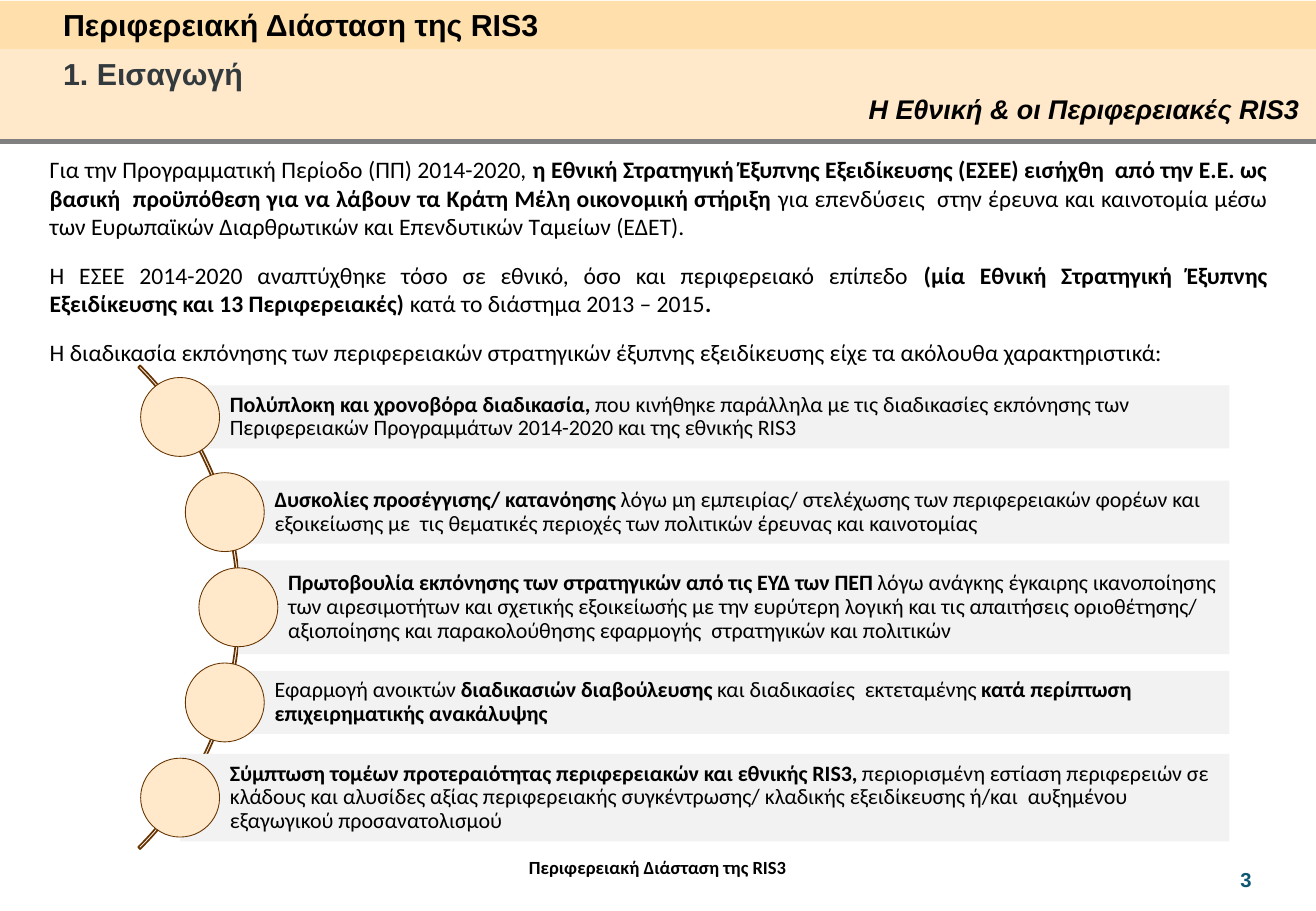
from math import sqrt

from pptx import Presentation
from pptx.dml.color import RGBColor
from pptx.enum.shapes import MSO_CONNECTOR, MSO_SHAPE
from pptx.enum.text import MSO_ANCHOR, MSO_AUTO_SIZE, PP_ALIGN
from pptx.oxml import parse_xml
from pptx.util import Cm, Pt

RECT, ELLIPSE, BLOCK_ARC = MSO_SHAPE.RECTANGLE, MSO_SHAPE.OVAL, MSO_SHAPE.BLOCK_ARC
STRAIGHT = MSO_CONNECTOR.STRAIGHT
TOP, MIDDLE = MSO_ANCHOR.TOP, MSO_ANCHOR.MIDDLE
LEFT, CENTER, JUSTIFY = PP_ALIGN.LEFT, PP_ALIGN.CENTER, PP_ALIGN.JUSTIFY
GROW = MSO_AUTO_SIZE.SHAPE_TO_FIT_TEXT
SLIDE_W, SLIDE_H = 27.51, 19.05
BLACK, CREAM, BROWN = "000000", "FFE9CA", "663300"
INSETS = (0.25, 0.13, 0.25, 0.13)
NS = "http://schemas.openxmlformats.org/drawingml/2006/main"

TOPIC = "Περιφερειακή Διάσταση της RIS3"

# Each paragraph is a list of (text, bold) pieces
INTRO = [
    [("Για την Προγραμματική Περίοδο (ΠΠ) 2014-2020, ", False),
     ("η Εθνική Στρατηγική Έξυπνης Εξειδίκευσης (ΕΣΕΕ) εισήχθη  από την Ε.Ε. ως βασική  "
      "προϋπόθεση για να λάβουν τα Κράτη Μέλη οικονομική στήριξη ", True),
     ("για επενδύσεις  στην έρευνα και καινοτομία μέσω των Ευρωπαϊκών Διαρθρωτικών και "
      "Επενδυτικών Ταμείων (ΕΔΕΤ).", False)],
    [("Η ΕΣΕΕ 2014-2020 αναπτύχθηκε τόσο σε εθνικό, όσο και περιφερειακό επίπεδο ", False),
     ("(μία Εθνική Στρατηγική Έξυπνης Εξειδίκευσης και 13 Περιφερειακές) ", True),
     ("κατά το διάστημα 2013 – 2015", False), (".", True)],
    [("Η διαδικασία εκπόνησης των περιφερειακών στρατηγικών έξυπνης εξειδίκευσης είχε τα "
      "ακόλουθα χαρακτηριστικά:", False)],
]

# Bar height and text of each characteristic
CHARACTERISTICS = [
    (1.32, [("Πολύπλοκη και χρονοβόρα διαδικασία, ", True),
            ("που κινήθηκε παράλληλα με τις διαδικασίες εκπόνησης των Περιφερειακών "
             "Προγραμμάτων 2014-2020 και της εθνικής RIS3", False)]),
    (1.32, [("Δυσκολίες προσέγγισης/ κατανόησης ", True),
            ("λόγω μη εμπειρίας/ στελέχωσης των περιφερειακών φορέων και εξοικείωσης με  "
             "τις θεματικές περιοχές των πολιτικών έρευνας και καινοτομίας", False)]),
    (1.96, [("Πρωτοβουλία εκπόνησης των στρατηγικών από τις ΕΥΔ των ΠΕΠ ", True),
            ("λόγω ανάγκης έγκαιρης ικανοποίησης των αιρεσιμοτήτων και σχετικής "
             "εξοικείωσής με την ευρύτερη λογική και τις απαιτήσεις οριοθέτησης/ "
             "αξιοποίησης και παρακολούθησης εφαρμογής  στρατηγικών και πολιτικών", False)]),
    (1.32, [("Εφαρμογή ανοικτών ", False), ("διαδικασιών διαβούλευσης ", True),
            ("και διαδικασίες  εκτεταμένης ", False),
            ("κατά περίπτωση επιχειρηματικής ανακάλυψης", True)]),
    (1.83, [("Σύμπτωση τομέων προτεραιότητας περιφερειακών και εθνικής RIS3, ", True),
            ("περιορισμένη εστίαση περιφερειών σε κλάδους και αλυσίδες αξίας "
             "περιφερειακής συγκέντρωσης/ κλαδικής εξειδίκευσης ή/και  αυξημένου "
             "εξαγωγικού προσανατολισμού", False)]),
]


def rgb(value):
    return RGBColor.from_string(value)


def apply(target, values):
    for name, value in values.items():
        setattr(target, name, value)


def write(frame, paragraphs, size, font="Calibri", color=BLACK, italic=False,
          align=LEFT, anchor=TOP, insets=INSETS, wrap=True, gap=0, spacing=None):
    left, top, right, bottom = map(Cm, insets)
    apply(frame, {"word_wrap": wrap, "vertical_anchor": anchor, "margin_left": left,
                  "margin_top": top, "margin_right": right, "margin_bottom": bottom})
    for index, pieces in enumerate(paragraphs):
        paragraph = frame.add_paragraph() if index else frame.paragraphs[0]
        apply(paragraph, {"alignment": align, "line_spacing": spacing,
                          "space_before": Pt(gap if index else 0),
                          "space_after": Pt(gap)})
        for text, bold in pieces:
            run = paragraph.add_run()
            run.text = text
            apply(run.font, {"name": font, "size": Pt(size), "bold": bold, "italic": italic})
            run.font.color.rgb = rgb(color)


def add_text(slide, box, paragraphs, size, grow=True, **style):
    frame = slide.shapes.add_textbox(*map(Cm, box)).text_frame
    write(frame, paragraphs, size, **style)
    if grow:
        frame.auto_size = GROW


def add_figure(slide, preset, box, fill=None, line=None, weight=1):
    figure = slide.shapes.add_shape(preset, *map(Cm, box))
    figure.shadow.inherit = False
    if fill:
        figure.fill.solid()
        figure.fill.fore_color.rgb = rgb(fill)
    else:
        figure.fill.background()
    if line:
        figure.line.color.rgb = rgb(line)
        figure.line.width = Pt(weight)
    else:
        figure.line.fill.background()
    return figure


def add_header(slide, left, top, width, height):
    topic_height = 1.02
    add_figure(slide, RECT, (left, top, width, topic_height), "FFDFAB")
    add_figure(slide, RECT, (left, top + topic_height, width, height - topic_height), CREAM)
    ends = (left, top + height, left + width, top + height)
    rule = slide.shapes.add_connector(STRAIGHT, *map(Cm, ends))
    rule.line.color.rgb = rgb("808080")
    rule.line.width = Pt(3)
    rule._element.spPr.append(parse_xml(f'<a:effectLst xmlns:a="{NS}"/>'))

    heading = {"size": 18, "font": "Arial", "wrap": False}
    add_text(slide, (left + 1.07, top + 1, 4.67, 1.02), [[("1. Εισαγωγή", True)]],
             color="333A3E", **heading)
    add_text(slide, (left + 1.07, top - 0.02, 10.74, 1.02), [[(TOPIC, True)]], **heading)
    add_text(slide, (left + width - 9.6, top + 1.78, 9.6, 0.94),
             [[("Η Εθνική & οι Περιφερειακές RIS3", True)]], 16, font="Arial", italic=True)


def add_characteristics(slide, left, top, width, height):
    dot, pitch, radius = 1.65, 1.99, 7.15
    middle = top + height / 2
    # The arc spans 45° either side of the horizontal, starting at the left edge
    hub = left - radius * sqrt(0.5)
    arc = add_figure(slide, BLOCK_ARC, (hub - radius, middle - radius, 2 * radius, 2 * radius),
                     line=BROWN)
    for index, value in enumerate((189, 27, 0.004)):
        arc.adjustments[index] = value

    for index, (bar_height, pieces) in enumerate(CHARACTERISTICS):
        offset = (index - (len(CHARACTERISTICS) - 1) / 2) * pitch
        x, y = hub + sqrt((radius - 0.04) ** 2 - offset ** 2), middle + offset
        bar = add_figure(slide, RECT, (x, y - bar_height / 2, left + width - x, bar_height),
                         "F2F2F2")
        write(bar.text_frame, [pieces], 13, anchor=MIDDLE, spacing=0.9,
              insets=(1.04, 0.1, 0.1, 0.1))
        add_figure(slide, ELLIPSE, (x - dot / 2, y - dot / 2, dot, dot), CREAM, BROWN, 0.5)


def add_footer(slide, left, top, width, height):
    add_text(slide, (left + 7.16, top, 13.18, height), [[(TOPIC, True)]], 11, grow=False,
             align=CENTER, insets=(0, 0, 0, 0))
    add_text(slide, (left + width - 1.83, top + 0.1, 1.32, 0.76), [[("3", True)]], 12,
             font="Arial", color="0E5772")


def main():
    deck = Presentation()
    apply(deck, {"slide_width": Cm(SLIDE_W), "slide_height": Cm(SLIDE_H)})
    slide = deck.slides.add_slide(deck.slide_layouts[6])
    add_header(slide, 0, 0.02, SLIDE_W, 2.93)
    add_text(slide, (0.79, 3.12, 25.96, 4.6), INTRO, 14, align=JUSTIFY, gap=6)
    add_characteristics(slide, 2.93, 7.65, 22.77, 10.1)
    add_footer(slide, 0, 17.91, SLIDE_W, 0.97)
    deck.save("out.pptx")


if __name__ == "__main__":
    main()
